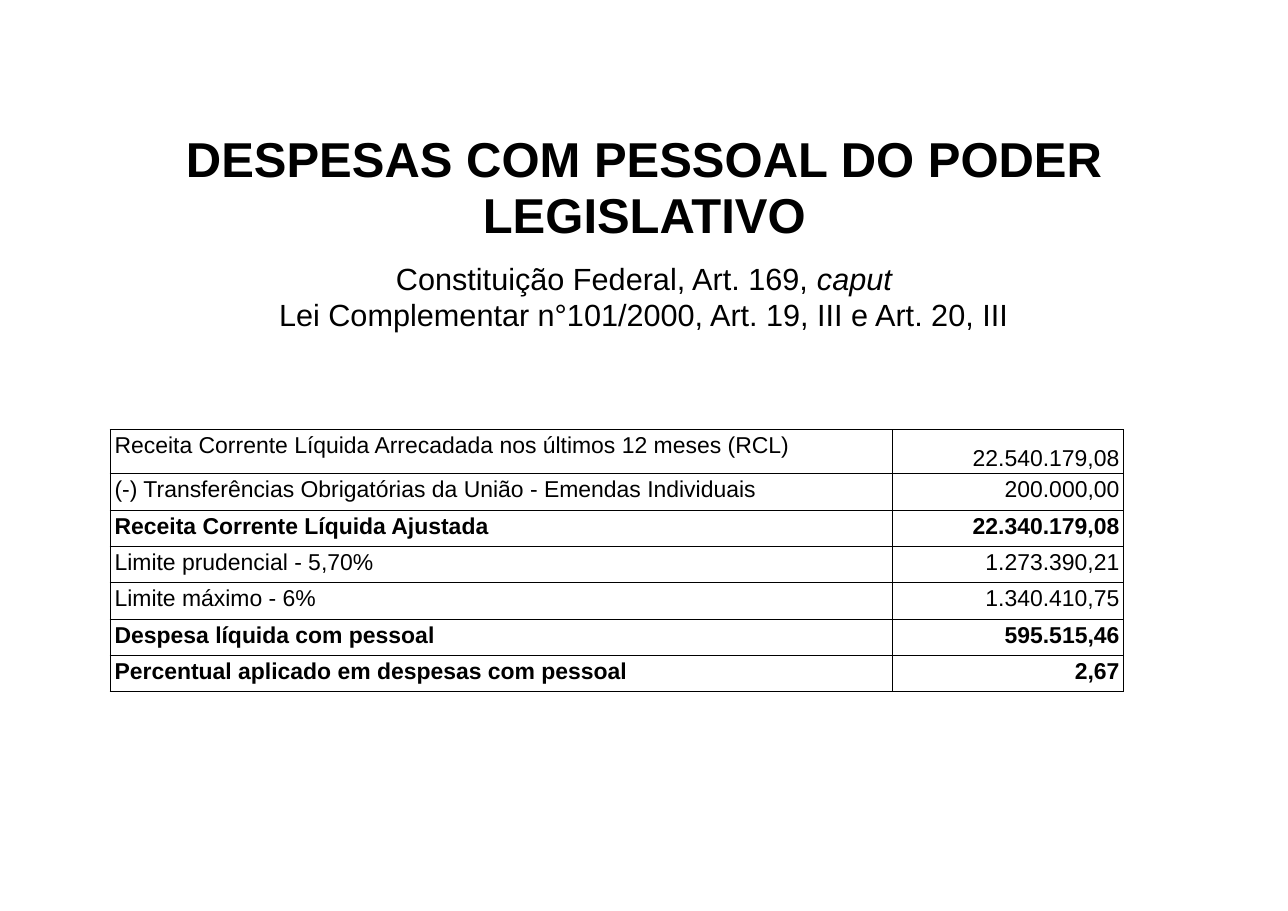
from dataclasses import dataclass

import pptx
import pptx.dml.color
import pptx.enum.text
import pptx.oxml
import pptx.oxml.ns
import pptx.table
import pptx.text.text
import pptx.util
from pptx.util import Inches

COLORS = {"text": "000000", "border": "000000"}
FONT = "Arial"
ALIGN = pptx.enum.text.PP_ALIGN
BORDER_SIDES = ("lnL", "lnR", "lnT", "lnB")


@dataclass
class ExpenseRow:
    label: str
    value: str
    bold: bool = False
    height: float = 0.33
    value_top: float = 0.03


EXPENSE_ROWS = [
    ExpenseRow("Receita Corrente Líquida Arrecadada nos últimos 12 meses (RCL)",
               "22.540.179,08", height=0.4, value_top=0.15),
    ExpenseRow("(-) Transferências Obrigatórias da União - Emendas Individuais", "200.000,00"),
    ExpenseRow("Receita Corrente Líquida Ajustada", "22.340.179,08", bold=True),
    ExpenseRow("Limite prudencial - 5,70%", "1.273.390,21"),
    ExpenseRow("Limite máximo - 6%", "1.340.410,75"),
    ExpenseRow("Despesa líquida com pessoal", "595.515,46", bold=True),
    ExpenseRow("Percentual aplicado em despesas com pessoal", "2,67", bold=True),
]


def style_paragraph(paragraph: pptx.text.text._Paragraph, size: float,
                    alignment: ALIGN, bold: bool = False) -> None:
    paragraph.alignment = alignment
    paragraph.font.name = FONT
    paragraph.font.size = pptx.util.Pt(size)
    paragraph.font.bold = bold
    paragraph.font.color.rgb = pptx.dml.color.RGBColor.from_string(COLORS["text"])


def prepare_frame(frame: pptx.text.text.TextFrame, top: float) -> None:
    frame.word_wrap = True
    frame.auto_size = pptx.enum.text.MSO_AUTO_SIZE.NONE
    frame.vertical_anchor = pptx.enum.text.MSO_ANCHOR.TOP
    frame.margin_left = frame.margin_right = frame.margin_bottom = 0
    frame.margin_top = Inches(top)


def add_borders(cell: pptx.table._Cell) -> None:
    properties = cell._tc.get_or_add_tcPr()
    for position, side in enumerate(BORDER_SIDES):
        border = pptx.oxml.parse_xml(
            f'<a:{side} {pptx.oxml.ns.nsdecls("a")} w="{pptx.util.Pt(0.75)}">'
            f'<a:solidFill><a:srgbClr val="{COLORS["border"]}"/></a:solidFill></a:{side}>')
        properties.insert(position, border)


def fill_cell(cell: pptx.table._Cell, text: str, alignment: ALIGN,
              bold: bool, top: float) -> None:
    cell.text = text
    cell.margin_left = cell.margin_right = Inches(0.04)
    cell.margin_top = Inches(top)
    cell.margin_bottom = 0
    cell.vertical_anchor = pptx.enum.text.MSO_ANCHOR.TOP
    cell.fill.background()
    style_paragraph(cell.text_frame.paragraphs[0], 15, alignment, bold)
    add_borders(cell)


def add_title(slide: pptx.slide.Slide) -> None:
    title = slide.shapes.title
    title.left, title.top = Inches(0.56), Inches(1.07)
    title.width, title.height = Inches(10.58), Inches(1.53)
    prepare_frame(title.text_frame, 0.12)
    heading = title.text_frame.paragraphs[0]
    heading.text = "DESPESAS COM PESSOAL DO PODER LEGISLATIVO"
    heading.line_spacing = pptx.util.Pt(36.7)
    heading.space_before = pptx.util.Pt(3.6)
    style_paragraph(heading, 32, ALIGN.CENTER, bold=True)


def add_legal_basis(slide: pptx.slide.Slide) -> None:
    legal_basis = slide.shapes.add_textbox(
        Inches(2.51), Inches(2.36), Inches(6.67), Inches(0.68)).text_frame
    prepare_frame(legal_basis, 0.01)
    constitution = legal_basis.paragraphs[0]
    constitution.add_run().text = "Constituição Federal, Art. 169, "
    caput = constitution.add_run()
    caput.text = "caput"
    caput.font.italic = True
    law = legal_basis.add_paragraph()
    law.text = "Lei Complementar n°101/2000, Art. 19, III e Art. 20, III"
    for paragraph in (constitution, law):
        paragraph.line_spacing = pptx.util.Pt(23.4)
        style_paragraph(paragraph, 20, ALIGN.CENTER)


def add_expense_table(slide: pptx.slide.Slide) -> None:
    expenses = slide.shapes.add_table(
        len(EXPENSE_ROWS), 2, Inches(1), Inches(3.9), Inches(9.2), Inches(2.4)).table
    expenses.first_row = expenses.horz_banding = False
    for column, width in zip(expenses.columns, (7.1, 2.1)):
        column.width = Inches(width)
    for index, row in enumerate(EXPENSE_ROWS):
        expenses.rows[index].height = Inches(row.height)
        fill_cell(expenses.cell(index, 0), row.label, ALIGN.LEFT, row.bold, 0.03)
        fill_cell(expenses.cell(index, 1), row.value, ALIGN.RIGHT, row.bold, row.value_top)


def main() -> None:
    presentation = pptx.Presentation()
    presentation.slide_width = Inches(11.69)
    presentation.slide_height = Inches(8.27)
    slide = presentation.slides.add_slide(presentation.slide_layouts[5])
    add_title(slide)
    add_legal_basis(slide)
    add_expense_table(slide)
    presentation.save("out.pptx")


if __name__ == "__main__":
    main()
